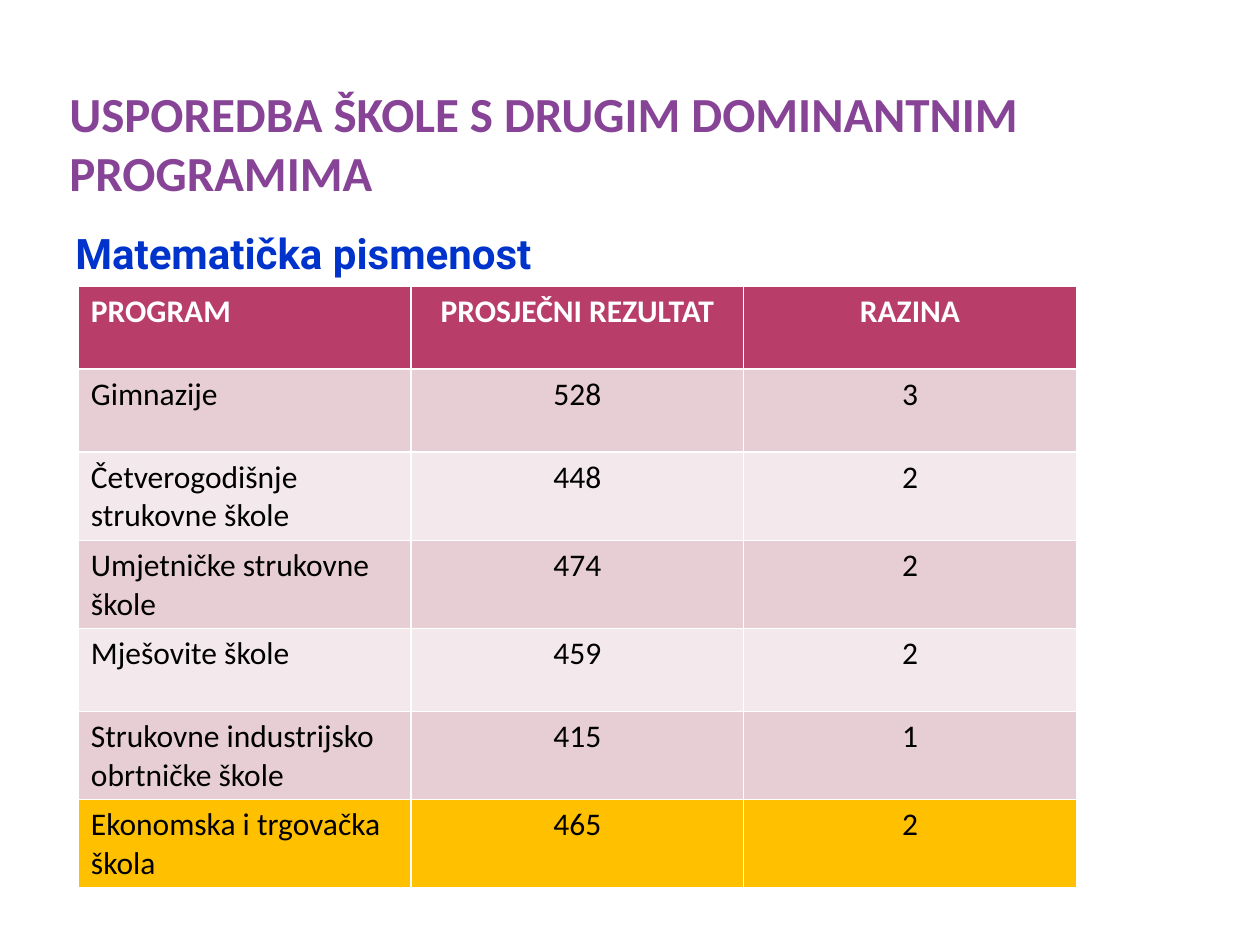
from pptx import Presentation
from pptx.dml.color import RGBColor
from pptx.enum.text import MSO_ANCHOR, PP_ALIGN
from pptx.util import Cm, Pt

LEFT, CENTER = PP_ALIGN.LEFT, PP_ALIGN.CENTER
TOP, BOTTOM = MSO_ANCHOR.TOP, MSO_ANCHOR.BOTTOM
PURPLE = RGBColor(0x87, 0x43, 0x96)
BLUE = RGBColor(0x00, 0x33, 0xCC)
WHITE = RGBColor(0xFF, 0xFF, 0xFF)
BLACK = RGBColor(0x00, 0x00, 0x00)
CRIMSON = RGBColor(0xB8, 0x3D, 0x68)
ROSE = RGBColor(0xE6, 0xCE, 0xD4)
PALE_ROSE = RGBColor(0xF3, 0xE8, 0xEB)
GOLD = RGBColor(0xFF, 0xC0, 0x00)

HEADER = ("PROGRAM", "PROSJEČNI REZULTAT", "RAZINA")
PROGRAMS = [
    ("Gimnazije", 528, 3),
    ("Četverogodišnje strukovne škole", 448, 2),
    ("Umjetničke strukovne škole", 474, 2),
    ("Mješovite škole", 459, 2),
    ("Strukovne industrijsko obrtničke škole", 415, 1),
]
OWN_SCHOOL = ("Ekonomska i trgovačka škola", 465, 2)


class SlideBuilder:
    """Adds styled text and tables to one slide."""

    def __init__(self, slide):
        self.slide = slide
        self.styles = {
            "title": {"name": "Calibri", "size": Pt(28), "bold": True, "color": PURPLE},
            "subtitle": {"name": "Roboto", "size": Pt(24), "bold": True, "color": BLUE},
            "header": {"name": "Calibri", "size": Pt(18), "bold": True, "color": WHITE},
            "body": {"name": "Calibri", "size": Pt(18), "bold": False, "color": BLACK},
        }

    def fill_frame(self, frame, text, style, alignment=LEFT):
        paragraph = frame.paragraphs[0]
        paragraph.alignment = alignment
        run = paragraph.add_run()
        run.text = text
        for name, value in self.styles[style].items():
            if name == "color":
                run.font.color.rgb = value
            else:
                setattr(run.font, name, value)

    def text(self, text, style, box, frame_format):
        frame = self.slide.shapes.add_textbox(*map(Cm, box)).text_frame
        for name, value in frame_format.items():
            setattr(frame, name, value)
        self.fill_frame(frame, text, style)

    def table(self, rows, fills, box):
        shape = self.slide.shapes.add_table(len(rows), len(rows[0]), *map(Cm, box))
        for row_index, (values, fill) in enumerate(zip(rows, fills)):
            style = "body" if row_index else "header"
            for column_index, value in enumerate(values):
                cell = shape.table.cell(row_index, column_index)
                cell.fill.solid()
                cell.fill.fore_color.rgb = fill
                alignment = CENTER if column_index else LEFT
                self.fill_frame(cell.text_frame, str(value), style, alignment)


def main():
    presentation = Presentation()
    presentation.slide_width, presentation.slide_height = Cm(25.4), Cm(19.05)
    builder = SlideBuilder(presentation.slides.add_slide(presentation.slide_layouts[6]))
    builder.text(
        "USPOREDBA ŠKOLE S DRUGIM DOMINANTNIM PROGRAMIMA",
        "title",
        (1.27, 0.89, 20.12, 3.17),
        {
            "word_wrap": True,
            "vertical_anchor": BOTTOM,
            "margin_left": Cm(0.13),
            "margin_right": Cm(0.13),
            "margin_top": 0,
            "margin_bottom": 0,
        },
    )
    builder.text(
        "Matematička pismenost",
        "subtitle",
        (1.27, 4.47, 20.12, 13.46),
        {"word_wrap": True, "vertical_anchor": TOP},
    )
    stripes = [PALE_ROSE if index % 2 else ROSE for index in range(len(PROGRAMS))]
    builder.table(
        [HEADER, *PROGRAMS, OWN_SCHOOL],
        [CRIMSON, *stripes, GOLD],
        (1.58, 5.77, 20.12, 11.7),
    )
    presentation.save("out.pptx")


if __name__ == "__main__":
    main()
